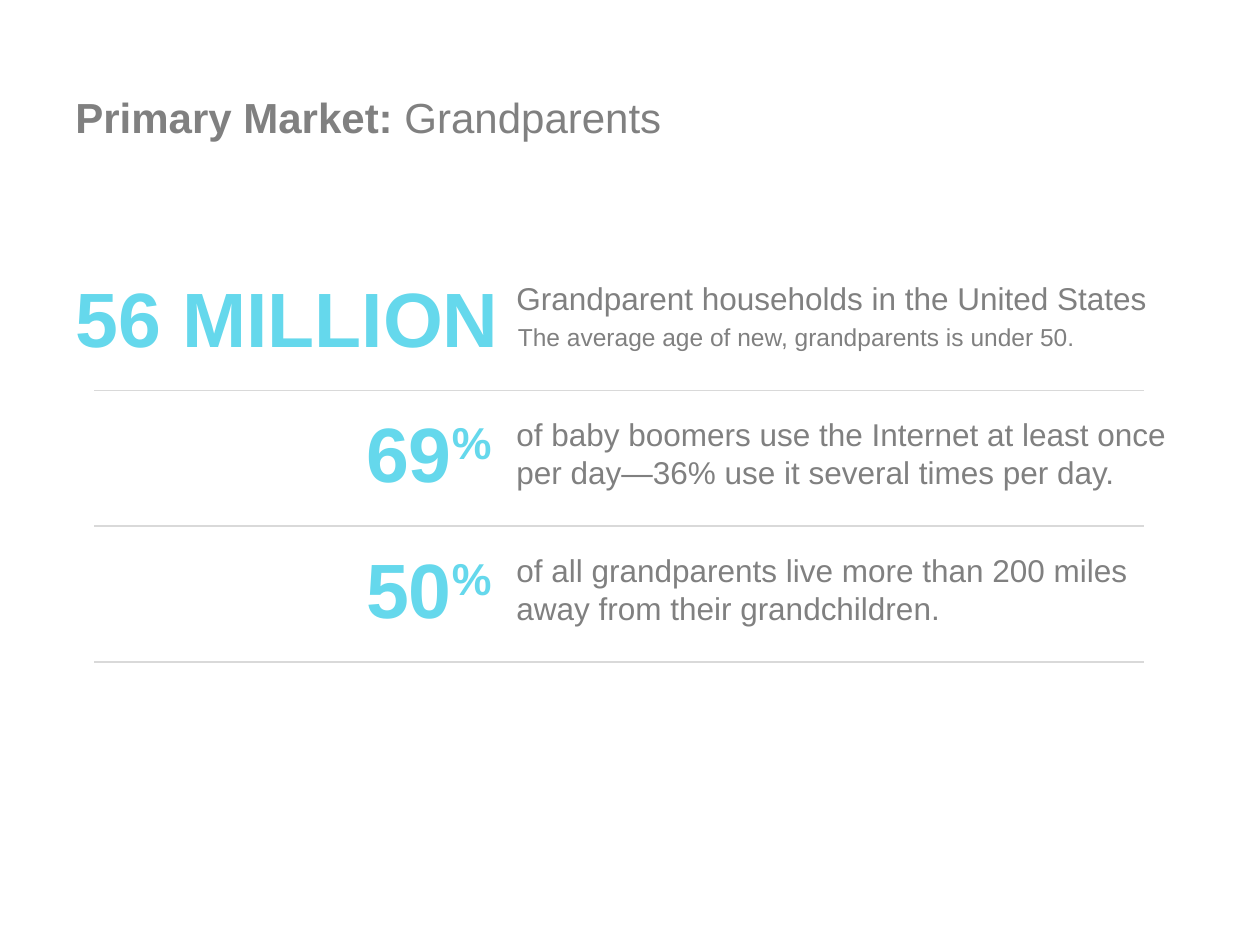
from lxml.etree import SubElement
from pptx import Presentation
from pptx.dml.color import RGBColor
from pptx.enum.shapes import MSO_CONNECTOR
from pptx.enum.text import MSO_ANCHOR, PP_ALIGN
from pptx.oxml.ns import qn
from pptx.util import Cm, Pt

GRAY = RGBColor(0x80, 0x80, 0x80)
CYAN = RGBColor(0x65, 0xD8, 0xEC)
RULE = RGBColor(0xD9, 0xD9, 0xD9)

FONT = "Arial"
ROWS_TOP, ROW_HEIGHT = 5.13, 2.74
RULE_LEFT, RULE_RIGHT = 1.9, 23.06
TEXT_LEFT, TEXT_WIDTH = 10.16, 15.24

# Figure, superscript unit, left and width of the figure, statement, detail
STATISTICS = [
    ("56 MILLION", "", 1.27, 13.77,
     ["Grandparent households in the United States"],
     "The average age of new, grandparents is under 50."),
    ("69", "%", 5.28, 4.88,
     ["of baby boomers use the Internet at least once",
      "per day—36% use it several times per day."], ""),
    ("50", "%", 2.74, 7.42,
     ["of all grandparents live more than 200 miles",
      "away from their grandchildren."], ""),
]


def add_text(page, left, top, width, height, lines, size, color=GRAY,
             align=PP_ALIGN.LEFT, anchor=MSO_ANCHOR.TOP, wrap=True):
    """Place lines, each a list of (text, bold, superscript) spans."""
    box = page.shapes.add_textbox(Cm(left), Cm(top), Cm(width), Cm(height))
    frame = box.text_frame
    frame.word_wrap = wrap
    frame.vertical_anchor = anchor
    for index, spans in enumerate(lines):
        para = frame.add_paragraph() if index else frame.paragraphs[0]
        para.alignment = align
        for text, bold, superscript in spans:
            span = para.add_run()
            span.text = text
            span.font.name = FONT
            span.font.size = Pt(size)
            span.font.bold = bold
            span.font.color.rgb = color
            if superscript:
                span._r.get_or_add_rPr().set("baseline", "30000")


def add_rule(page, left, right, y):
    rule = page.shapes.add_connector(
        MSO_CONNECTOR.STRAIGHT, Cm(left), Cm(y), Cm(right), Cm(y))
    rule.line.color.rgb = RULE
    rule.line.width = Pt(1)
    SubElement(rule._element.spPr, qn("a:effectLst"))


def add_title(page, left, top, width, height):
    spans = [("Primary Market: ", True, False), ("Grandparents", False, False)]
    add_text(page, left, top, width, height, [spans], 24,
             anchor=MSO_ANCHOR.MIDDLE)


def add_statistic(page, top, height, statistic):
    figure, unit, left, width, statement, detail = statistic
    spans = [(figure, True, False)]
    if unit:
        spans.append((unit, True, True))
    add_text(page, left, top + 0.19, width, 2.13, [spans], 44, CYAN,
             align=PP_ALIGN.RIGHT if unit else PP_ALIGN.LEFT)
    add_text(page, TEXT_LEFT, top + 0.38, TEXT_WIDTH, 2.1,
             [[(line, False, False)] for line in statement], 18)
    if detail:
        add_text(page, TEXT_LEFT + 0.03, top + 1.24, 11.84, 0.86,
                 [[(detail, False, False)]], 14, wrap=False)
    add_rule(page, RULE_LEFT, RULE_RIGHT, top + height)


def main():
    deck = Presentation()
    deck.slide_width, deck.slide_height = Cm(25.4), Cm(19.05)
    page = deck.slides.add_slide(deck.slide_layouts[6])
    add_title(page, 1.27, 0.76, 22.86, 3.18)
    for index, statistic in enumerate(STATISTICS):
        add_statistic(page, ROWS_TOP + index * ROW_HEIGHT, ROW_HEIGHT, statistic)
    deck.save("out.pptx")


if __name__ == "__main__":
    main()
